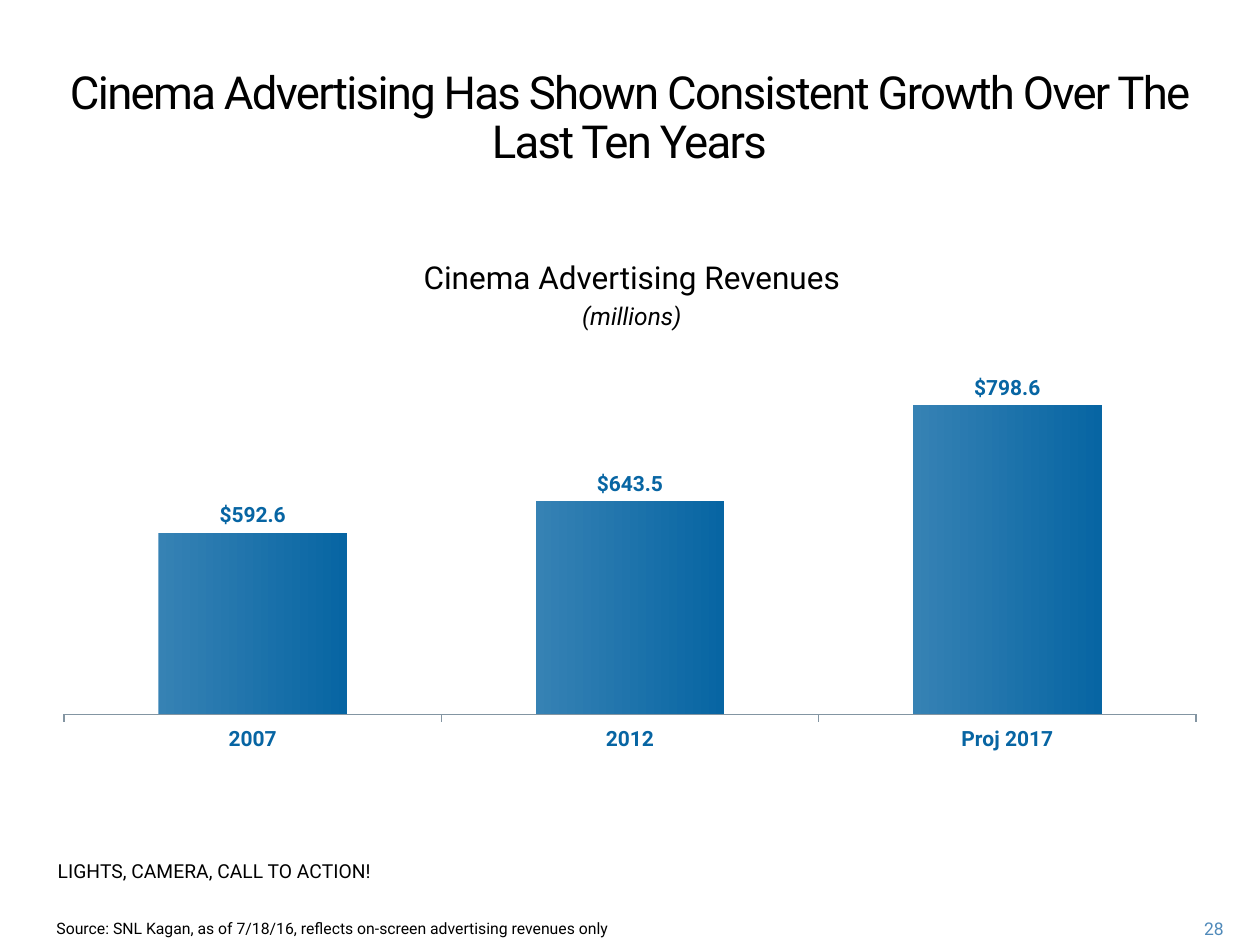
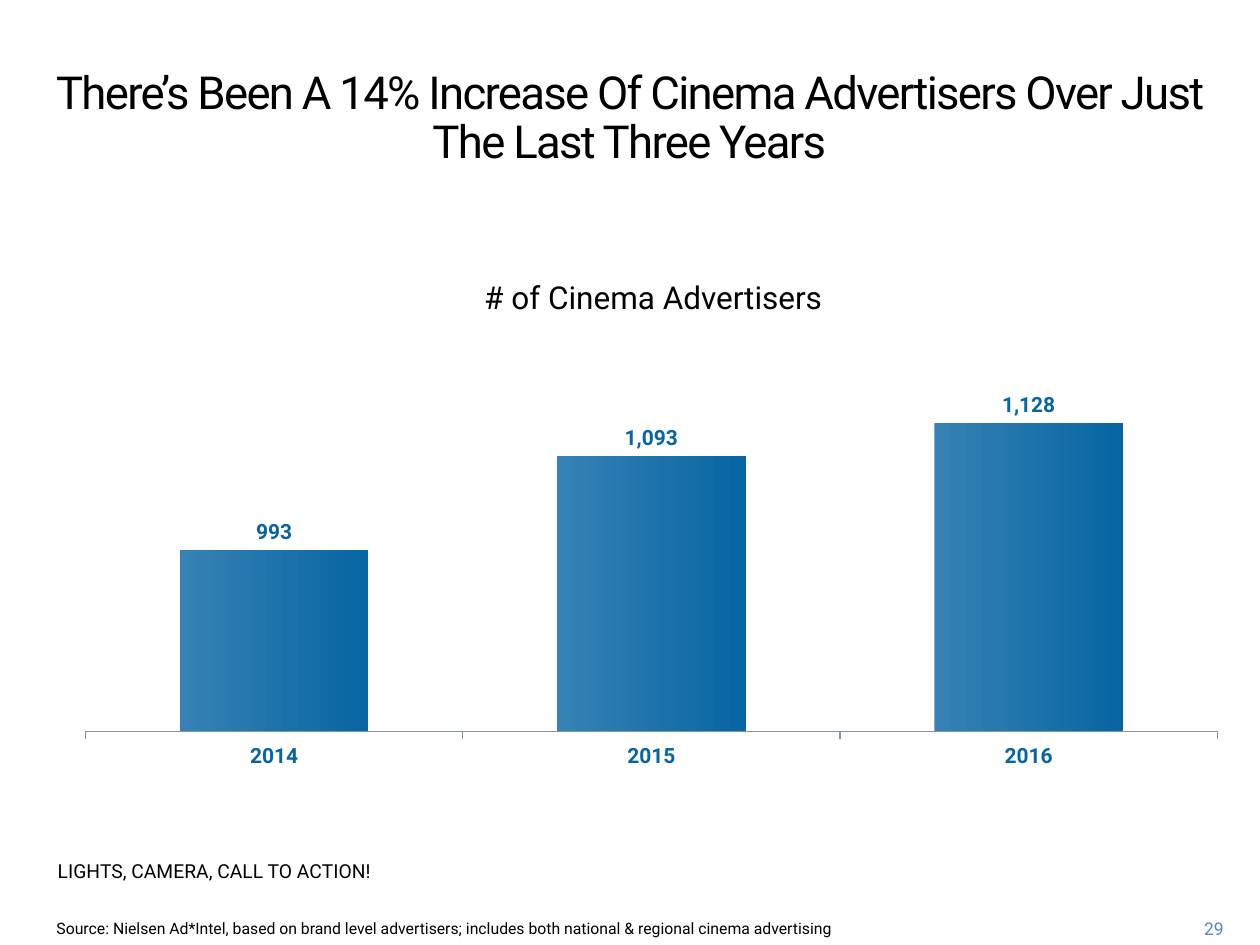
from dataclasses import dataclass
from typing import NamedTuple

from lxml import etree
from pptx import Presentation
from pptx.chart.data import CategoryChartData
from pptx.dml.color import RGBColor
from pptx.enum.chart import XL_CHART_TYPE, XL_LABEL_POSITION, XL_TICK_MARK
from pptx.enum.text import MSO_ANCHOR, MSO_AUTO_SIZE, PP_ALIGN
from pptx.oxml.ns import qn
from pptx.util import Inches, Pt

BLACK = RGBColor(0x00, 0x00, 0x00)
WHITE = RGBColor(0xFF, 0xFF, 0xFF)
LIGHT_BLUE = RGBColor(0x36, 0x82, 0xB4)
DEEP_BLUE = RGBColor(0x07, 0x65, 0xA3)
NUMBER_BLUE = RGBColor(0x50, 0x8A, 0xBA)
AXIS_GREY = RGBColor(0x83, 0x95, 0xA2)

LEFT, CENTER, RIGHT = PP_ALIGN.LEFT, PP_ALIGN.CENTER, PP_ALIGN.RIGHT
TOP, NO_FIT = MSO_ANCHOR.TOP, MSO_AUTO_SIZE.NONE
CLUSTERED = XL_CHART_TYPE.COLUMN_CLUSTERED
OUTSIDE_END = XL_LABEL_POSITION.OUTSIDE_END
TICK_OUTSIDE, TICK_NONE = XL_TICK_MARK.OUTSIDE, XL_TICK_MARK.NONE

FONT = "Roboto"
SLIDE_WIDTH, SLIDE_HEIGHT = Inches(10), Inches(7.5)
COLUMN, ROW = SLIDE_WIDTH / 100, SLIDE_HEIGHT / 75
TAGLINE = "LIGHTS, CAMERA, CALL TO ACTION!"
PLOT_PERCENT = {"x": 1.6, "y": 25.4, "w": 96.7, "h": 64.4}


class Area(NamedTuple):
    column: float
    row: float
    columns: float
    rows: float

    def lengths(self) -> tuple[int, int, int, int]:
        return (round(self.column * COLUMN), round(self.row * ROW),
                round(self.columns * COLUMN), round(self.rows * ROW))


class Line(NamedTuple):
    text: str
    size: float
    color: RGBColor = BLACK
    italic: bool = False
    spacing: int = 0


@dataclass
class ColumnSlide:
    number: int
    title: str
    heading: list[Line]
    heading_area: Area
    chart_area: Area
    categories: list[str]
    values: list[float]
    minimum: float
    maximum: float
    number_format: str
    source: str


TITLE_AREA = Area(1.8, 5, 96.3, 14)
TAGLINE_AREA = Area(3.6, 67.7, 30.8, 4.7)
SOURCE_AREA = Area(3.5, 72.4, 68.6, 2.6)
NUMBER_AREA = Area(92, 72.4, 6.1, 2.5)

SLIDES = [
    ColumnSlide(
        number=28,
        title="Cinema Advertising Has Shown Consistent Growth Over The Last Ten Years",
        heading=[Line("Cinema Advertising Revenues", 18),
                 Line("(millions)", 14, italic=True)],
        heading_area=Area(2, 20, 96.3, 9),
        chart_area=Area(3.6, 22.4, 92.9, 38.2),
        categories=["2007", "2012", "Proj 2017"],
        values=[592.6, 643.5, 798.6],
        minimum=300,
        maximum=800,
        number_format='"$"#,##0.0',
        source="Source: SNL Kagan, as of 7/18/16, reflects on-screen "
               "advertising revenues only",
    ),
    ColumnSlide(
        number=29,
        title="There’s Been A 14% Increase Of Cinema Advertisers Over Just "
              "The Last Three Years",
        heading=[Line("# of Cinema Advertisers", 18)],
        heading_area=Area(3.7, 21.6, 96.3, 9),
        chart_area=Area(5.3, 21.6, 92.9, 40.6),
        categories=["2014", "2015", "2016"],
        values=[993, 1093, 1128],
        minimum=800,
        maximum=1150,
        number_format="#,##0",
        source="Source: Nielsen Ad*Intel, based on brand level advertisers; "
               "includes both national & regional cinema advertising",
    ),
]


def place(shape, area: Area) -> None:
    shape.left, shape.top, shape.width, shape.height = area.lengths()


def style_font(font, size: float, color: RGBColor, bold: bool = False) -> None:
    font.name = FONT
    font.size = Pt(size)
    font.bold = bold
    font.color.rgb = color


def write_lines(shape, lines: list[Line], alignment, line_spacing=None) -> None:
    frame = shape.text_frame
    frame.word_wrap = True
    frame.auto_size = NO_FIT
    frame.vertical_anchor = TOP
    for index, line in enumerate(lines):
        paragraph = frame.add_paragraph() if index else frame.paragraphs[0]
        paragraph.alignment = alignment
        paragraph.space_before = Pt(line.size * 0.2 if index else 0)
        if line_spacing:
            paragraph.line_spacing = line_spacing
        run = paragraph.add_run()
        run.text = line.text
        style_font(run.font, line.size, line.color)
        run.font.italic = line.italic
        if line.spacing:
            run._r.get_or_add_rPr().set("spc", str(line.spacing))


def add_text(slide, area: Area, line: Line, alignment=LEFT) -> None:
    write_lines(slide.shapes.add_textbox(*area.lengths()), [line], alignment)


def set_plot_area(chart) -> None:
    plot_area = chart.element.find(".//" + qn("c:plotArea"))
    for layout in plot_area.findall(qn("c:layout")):
        plot_area.remove(layout)
    layout = etree.Element(qn("c:layout"))
    plot_area.insert(0, layout)
    manual = etree.SubElement(layout, qn("c:manualLayout"))
    settings = {"layoutTarget": "inner", "xMode": "edge", "yMode": "edge"}
    settings |= {key: str(share / 100) for key, share in PLOT_PERCENT.items()}
    for key, value in settings.items():
        etree.SubElement(manual, qn(f"c:{key}")).set("val", value)


def add_column_chart(slide, content: ColumnSlide) -> None:
    data = CategoryChartData(number_format=content.number_format)
    data.categories = content.categories
    data.add_series("Series 1", content.values)
    chart = slide.shapes.add_chart(
        CLUSTERED, *content.chart_area.lengths(), data).chart
    chart.has_legend = False
    chart.has_title = False
    style_font(chart.font, 18, BLACK)
    set_plot_area(chart)

    plot = chart.plots[0]
    plot.gap_width = 100
    plot.overlap = -20
    plot.vary_by_categories = False
    plot.has_data_labels = True
    labels = plot.data_labels
    labels.show_value = True
    labels.position = OUTSIDE_END
    labels.number_format = content.number_format
    labels.number_format_is_linked = False
    style_font(labels.font, 12, DEEP_BLUE, bold=True)

    fill = plot.series[0].format.fill
    fill.gradient()
    fill.gradient_angle = 0
    for stop, color in zip(fill.gradient_stops, (LIGHT_BLUE, DEEP_BLUE)):
        stop.color.rgb = color

    category_axis = chart.category_axis
    category_axis.major_tick_mark = TICK_OUTSIDE
    category_axis.minor_tick_mark = TICK_NONE
    category_axis.format.line.color.rgb = AXIS_GREY
    category_axis.format.line.width = Pt(0.75)
    style_font(category_axis.tick_labels.font, 12, DEEP_BLUE, bold=True)

    value_axis = chart.value_axis
    value_axis.minimum_scale = content.minimum
    value_axis.maximum_scale = content.maximum
    value_axis.has_major_gridlines = False
    value_axis.visible = False


def add_column_slide(presentation, content: ColumnSlide) -> None:
    slide = presentation.slides.add_slide(presentation.slide_layouts[0])
    slide.background.fill.solid()
    slide.background.fill.fore_color.rgb = WHITE
    title, heading = slide.placeholders
    place(title, TITLE_AREA)
    write_lines(title, [Line(content.title, 26, spacing=-100)], CENTER, Pt(28))
    place(heading, content.heading_area)
    write_lines(heading, content.heading, CENTER)
    add_column_chart(slide, content)
    add_text(slide, TAGLINE_AREA, Line(TAGLINE, 11))
    add_text(slide, SOURCE_AREA, Line(content.source, 9))
    add_text(slide, NUMBER_AREA, Line(str(content.number), 10, NUMBER_BLUE), RIGHT)


def main() -> None:
    presentation = Presentation()
    presentation.slide_width = SLIDE_WIDTH
    presentation.slide_height = SLIDE_HEIGHT
    for content in SLIDES:
        add_column_slide(presentation, content)
    presentation.save("out.pptx")


if __name__ == "__main__":
    main()
